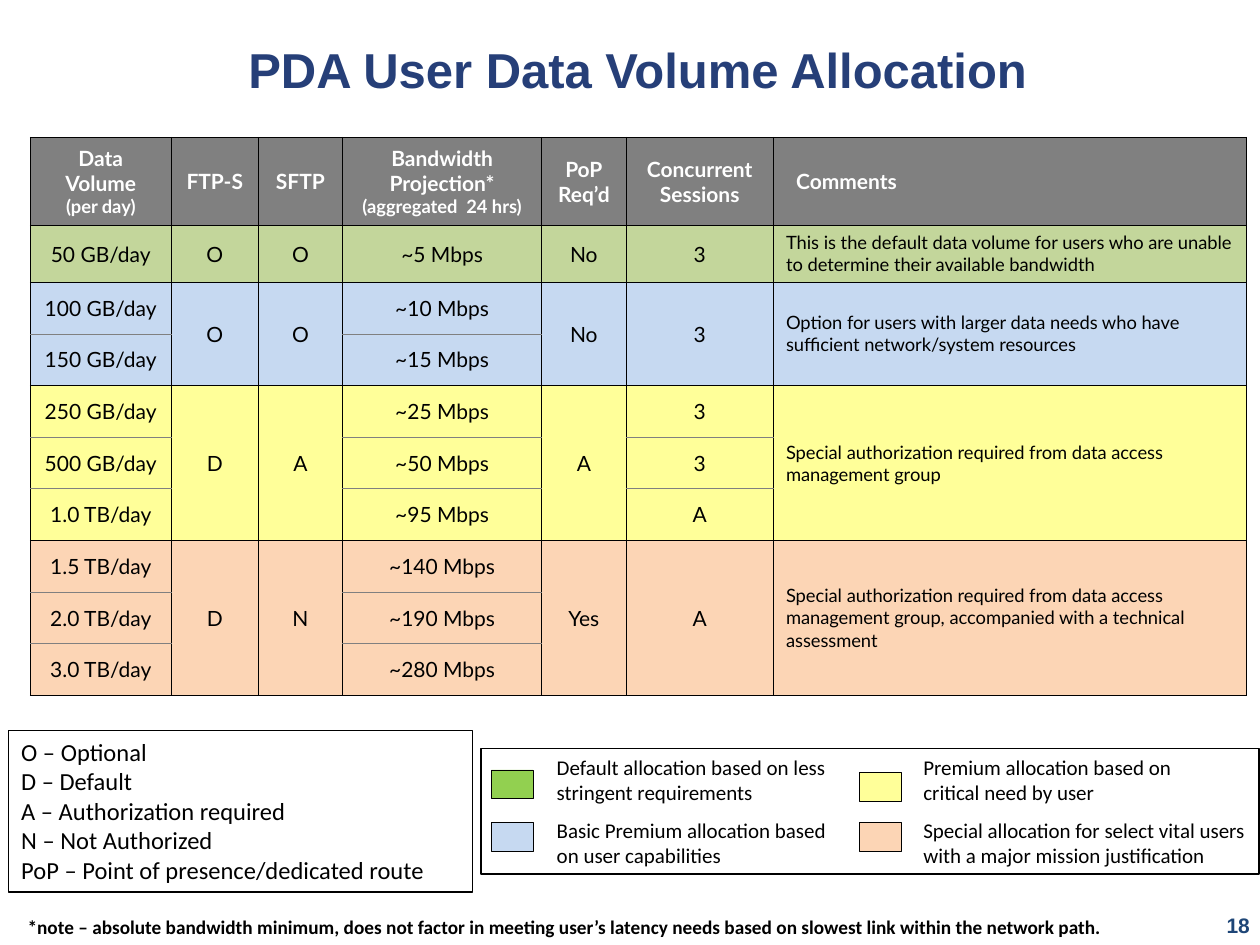
from lxml import etree
from pptx import Presentation
from pptx.dml.color import RGBColor
from pptx.enum.shapes import MSO_SHAPE
from pptx.enum.text import MSO_ANCHOR, MSO_AUTO_SIZE, PP_ALIGN
from pptx.oxml.ns import qn
from pptx.util import Inches, Pt

LEFT, CENTER, RIGHT = PP_ALIGN.LEFT, PP_ALIGN.CENTER, PP_ALIGN.RIGHT
TOP, MIDDLE, BOTTOM = MSO_ANCHOR.TOP, MSO_ANCHOR.MIDDLE, MSO_ANCHOR.BOTTOM
RECT = MSO_SHAPE.RECTANGLE
NO_FIT = MSO_AUTO_SIZE.NONE

COLORS = {
    "title": "263F78", "page": "1E4677", "black": "000000", "white": "FFFFFF",
    "gray": "808080", "olive": "C3D69B", "green": "92D050",
    "blue": "C6D9F1", "yellow": "FFFF99", "peach": "FCD5B5",
}

WIDTHS = [1.12, 0.69, 0.67, 1.58, 0.67, 1.17, 3.75]
HEAD_H, FIRST_H, ROW_H = 0.7, 0.45, 0.41
COMMENT = len(WIDTHS) - 1

# Each group is a fill and its rows; None continues the cell above.
GROUPS = [
    ("gray", [
        ["Data Volume\n(per day)", "FTP-S", "SFTP",
         "Bandwidth Projection*\n(aggregated  24 hrs)", "PoP\nReq’d",
         "Concurrent Sessions", "Comments"]]),
    ("olive", [
        ["50 GB/day", "O", "O", "~5 Mbps", "No", "3",
         "This is the default data volume for users who are unable "
         "to determine their available bandwidth"]]),
    ("blue", [
        ["100 GB/day", "O", "O", "~10 Mbps", "No", "3",
         "Option for users with larger data needs who have "
         "sufficient network/system resources"],
        ["150 GB/day", None, None, "~15 Mbps", None, None, None]]),
    ("yellow", [
        ["250 GB/day", "D", "A", "~25 Mbps", "A", "3",
         "Special authorization required from data access "
         "management group"],
        ["500 GB/day", None, None, "~50 Mbps", None, "3", None],
        ["1.0 TB/day", None, None, "~95 Mbps", None, "A", None]]),
    ("peach", [
        ["1.5 TB/day", "D", "N", "~140 Mbps", "Yes", "A",
         "Special authorization required from data access management "
         "group, accompanied with a technical assessment"],
        ["2.0 TB/day", None, None, "~190 Mbps", None, None, None],
        ["3.0 TB/day", None, None, "~280 Mbps", None, None, None]]),
]

CODES = """O – Optional
D – Default
A – Authorization required
N – Not Authorized
PoP – Point of presence/dedicated route"""

# Swatch x, y and fill, then label x, y, width and text.
LEGEND = [
    (3.9, 6.11, "green", 4.32, 5.94, 2.42,
     "Default allocation based on less stringent requirements"),
    (3.9, 6.53, "blue", 4.32, 6.44, 2.42,
     "Basic Premium allocation based on user capabilities"),
    (6.82, 6.13, "yellow", 7.23, 5.94, 2.42,
     "Premium allocation based on critical need by user"),
    (6.82, 6.53, "peach", 7.23, 6.44, 2.92,
     "Special allocation for select vital users "
     "with a major mission justification"),
]


def rgb(name):
    return RGBColor.from_string(COLORS[name])


class Deck:
    def __init__(self):
        self.prs = Presentation()
        self.prs.slide_width, self.prs.slide_height = Inches(10), Inches(7.5)
        self.slide = self.prs.slides.add_slide(self.prs.slide_layouts[5])
        self.shapes = self.slide.shapes

    def style(self, frame, size, color="black", bold=False, font="Calibri",
              align=LEFT):
        for para in frame.paragraphs:
            para.alignment = align
            for run in para.runs:
                run.font.name, run.font.size = font, Pt(size)
                run.font.bold = bold
                run.font.color.rgb = rgb(color)

    def title(self, text, x, y, w, h):
        shape = self.shapes.title
        shape.left, shape.top = Inches(x), Inches(y)
        shape.width, shape.height = Inches(w), Inches(h)
        frame = shape.text_frame
        frame.text = text
        frame.auto_size, frame.vertical_anchor = NO_FIT, TOP
        self.style(frame, 28, "title", True, "Arial", CENTER)

    def text(self, text, x, y, w, h, size, **look):
        box = self.shapes.add_textbox(Inches(x), Inches(y),
                                      Inches(w), Inches(h))
        frame = box.text_frame
        frame.word_wrap = True
        frame.text = text
        self.style(frame, size, **look)
        return frame

    def rect(self, x, y, w, h, line, fill=None):
        shape = self.shapes.add_shape(RECT, Inches(x), Inches(y),
                                      Inches(w), Inches(h))
        shape.shadow.inherit = False
        shape.line.color.rgb = rgb("black")
        shape.line.width = Pt(line)
        if fill:
            shape.fill.solid()
            shape.fill.fore_color.rgb = rgb(fill)
        else:
            shape.fill.background()
        return shape.text_frame

    def edges(self, cell, top, bottom):
        """Draw the cell borders; an edge of None is left out."""
        props = cell._tc.get_or_add_tcPr()
        sides = {"L": "black", "R": "black", "T": top, "B": bottom}
        for side, color in sides.items():
            if color:
                line = etree.SubElement(props, qn("a:ln" + side),
                                        w=str(Pt(0.5)))
                fill = etree.SubElement(line, qn("a:solidFill"))
                etree.SubElement(fill, qn("a:srgbClr"), val=COLORS[color])

    def cell(self, cell, text, fill, col):
        cell.fill.solid()
        cell.fill.fore_color.rgb = rgb(fill)
        cell.vertical_anchor = MIDDLE
        if text is None:
            return
        head, last = fill == "gray", col == COMMENT
        frame = cell.text_frame
        frame.text = text
        self.style(frame, 10.5 if last and not head else 12,
                   "white" if head else "black", head, "Lato",
                   LEFT if last else CENTER)
        if head and last:
            cell.margin_left = Inches(0.18)
        for para in frame.paragraphs:
            if para.text.startswith("("):
                para.runs[0].font.size = Pt(10.5)

    def table(self, x, y):
        count = sum(len(rows) for _, rows in GROUPS)
        heights = [HEAD_H, FIRST_H] + [ROW_H] * (count - 2)
        grid = self.shapes.add_table(
            count, len(WIDTHS), Inches(x), Inches(y),
            Inches(sum(WIDTHS)), Inches(sum(heights))).table
        grid.first_row = grid.horz_banding = False
        for col, width in zip(grid.columns, WIDTHS):
            col.width = Inches(width)
        for row, height in zip(grid.rows, heights):
            row.height = Inches(height)
        start = 0
        for fill, rows in GROUPS:
            end = len(rows) - 1
            for c, texts in enumerate(zip(*rows)):
                merged = None in texts
                inner = None if merged else "gray"
                for r, text in enumerate(texts):
                    cell = grid.cell(start + r, c)
                    whole = merged and r == 0
                    self.edges(cell, "black" if r == 0 else inner,
                               "black" if r == end or whole else inner)
                    self.cell(cell, text, fill, c)
                if merged:
                    grid.cell(start, c).merge(grid.cell(start + end, c))
            start += len(rows)


def main():
    deck = Deck()
    page = deck.text("18", 9.09, 7.04, 0.83, 0.4, 12, color="page",
                     bold=True, font="Arial", align=RIGHT)
    page.margin_left = page.margin_right = 0
    page.margin_top = page.margin_bottom = 0
    page.vertical_anchor = BOTTOM
    deck.title("PDA User Data Volume Allocation", 0.56, 0.26, 9, 0.45)
    deck.table(0.24, 1.09)

    codes = deck.rect(0.07, 5.8, 3.68, 1.28, 0.75)
    codes.text = CODES
    codes.vertical_anchor = TOP
    deck.style(codes, 14)

    note = deck.text("*note – absolute bandwidth minimum, does not factor in "
                     "meeting user’s latency needs based on slowest link "
                     "within the network path.",
                     0.12, 7.25, 9.71, 0.26, 11, bold=True)
    note.paragraphs[0].line_spacing = 0.8

    for x, y, fill, left, top, width, text in LEGEND:
        deck.rect(x, y, 0.33, 0.23, 0.25, fill)
        deck.text(text, left, top, width, 0.5, 12)
    deck.rect(3.82, 5.94, 6.17, 1, 1)
    deck.prs.save("out.pptx")


if __name__ == "__main__":
    main()
